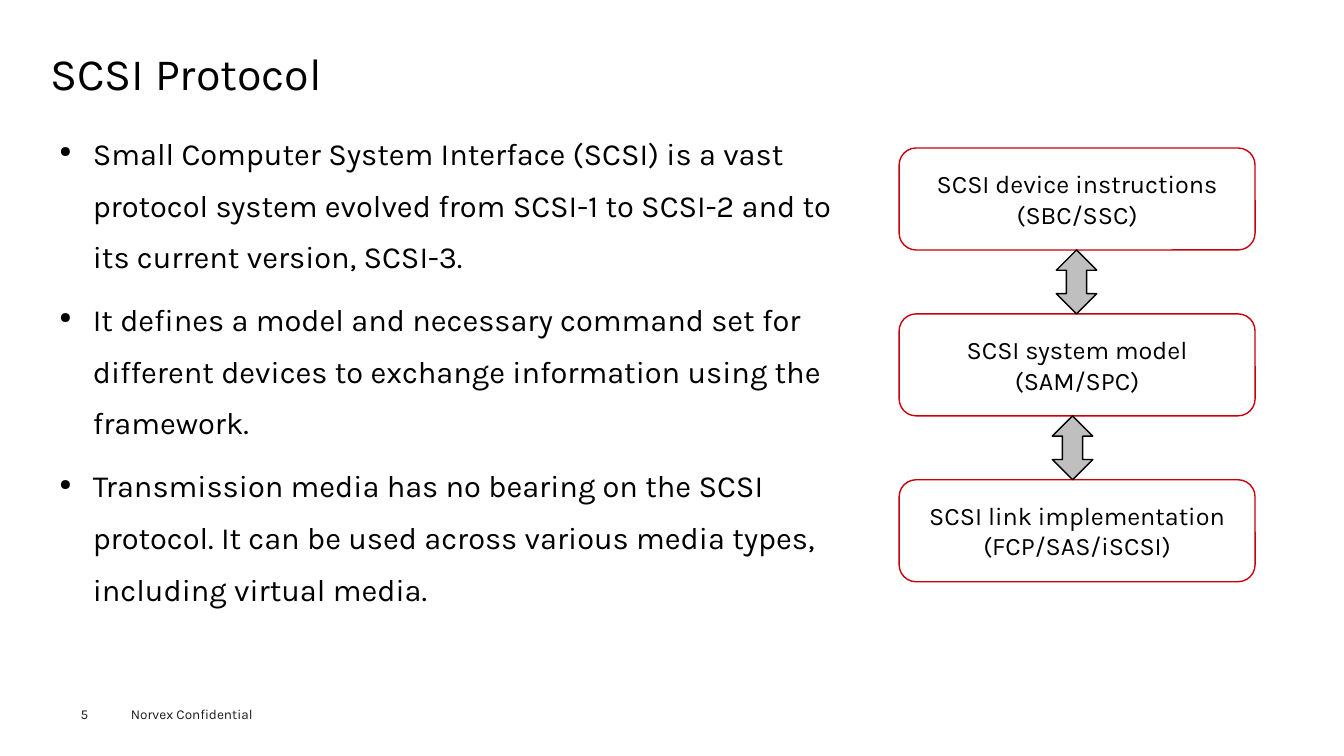
from pptx import Presentation
from pptx.dml.color import RGBColor
from pptx.enum.shapes import MSO_SHAPE as SHAPE
from pptx.enum.text import MSO_ANCHOR as ANCHOR, PP_ALIGN as ALIGN
from pptx.oxml import parse_xml
from pptx.oxml.ns import nsdecls
from pptx.util import Cm, Pt

FONT = "Karla"
BLACK, WHITE, RED, GREY, INK = "000000", "FFFFFF", "C7000B", "BFBFBF", "1D1D1B"

POINTS = [
    "Small Computer System Interface (SCSI) is a vast protocol system evolved "
    "from SCSI-1 to SCSI-2 and to its current version, SCSI-3.",
    "It defines a model and necessary command set for different devices to "
    "exchange information using the framework.",
    "Transmission media has no bearing on the SCSI protocol. It can be used "
    "across various media types, including virtual media.",
]
LAYERS = [
    ("SCSI device instructions", "(SBC/SSC)"),
    ("SCSI system model", "(SAM/SPC)"),
    ("SCSI link implementation", "(FCP/SAS/iSCSI)"),
]
ARROW_LEFTS = [26.62, 26.52]


def rgb(value):
    return RGBColor.from_string(value)


def write(tf, lines, size, color=BLACK, align=ALIGN.LEFT):
    tf.word_wrap = True
    tf.text = "\n".join(lines)
    for p in tf.paragraphs:
        p.alignment = align
        for r in p.runs:
            r.font.name, r.font.size = FONT, Pt(size)
            r.font.color.rgb = rgb(color)


def add_text(slide, box, lines, size, color=BLACK, inset=(0, 0)):
    tf = slide.shapes.add_textbox(*map(Cm, box)).text_frame
    tf.margin_left = tf.margin_right = Cm(inset[0])
    tf.margin_top = tf.margin_bottom = Cm(inset[1])
    write(tf, lines, size, color)
    return tf


def add_bullets(slide, box, lines, size):
    tf = add_text(slide, box, lines, size, inset=(0.23, 0.1))
    for i, p in enumerate(tf.paragraphs):
        p.line_spacing = 1.4
        p.space_before = Pt(7.9 if i else 0)
        pPr = p._p.get_or_add_pPr()
        pPr.set("marL", str(Cm(0.84)))
        pPr.set("indent", str(-Cm(0.84)))
        for tag in ('buSzPct val="50000"', 'buChar char="●"'):
            pPr.append(parse_xml(f"<a:{tag} {nsdecls('a')}/>"))


def add_shape(slide, kind, box, fill, line):
    sp = slide.shapes.add_shape(kind, *map(Cm, box))
    sp.shadow.inherit = False
    sp.fill.solid()
    sp.fill.fore_color.rgb = rgb(fill)
    sp.line.color.rgb = rgb(line)
    sp.line.width = Pt(1)
    return sp


def add_layer_stack(slide):
    left, top, width, height, pitch = 22.66, 3.73, 8.97, 2.57, 4.18
    for i, lines in enumerate(LAYERS):
        box = (left, top + i * pitch, width, height)
        sp = add_shape(slide, SHAPE.ROUNDED_RECTANGLE, box, WHITE, RED)
        sp.text_frame.vertical_anchor = ANCHOR.MIDDLE
        write(sp.text_frame, lines, 18, align=ALIGN.CENTER)
    # Arrows fill the gaps between the layers
    for i, x in enumerate(ARROW_LEFTS):
        box = (x, top + height + i * pitch, 1.02, pitch - height)
        add_shape(slide, SHAPE.UP_DOWN_ARROW, box, GREY, BLACK)


def main():
    prs = Presentation()
    prs.slide_width, prs.slide_height = Cm(33.87), Cm(19.05)
    slide = prs.slides.add_slide(prs.slide_layouts[6])

    # Footer
    add_text(slide, (3.05, 17.65, 5, 0.69), ["Norvex Confidential"], 9.7, INK, (0.25, 0.13))
    add_text(slide, (2.03, 17.78, 1.02, 0.41), ["5"], 9.7, INK)

    # Title
    tf = add_text(slide, (1.27, 1.24, 31.37, 1.37), ["SCSI Protocol"], 32)
    tf.vertical_anchor = ANCHOR.MIDDLE
    tf.paragraphs[0].line_spacing = 0.9

    # Body and diagram
    add_bullets(slide, (1.27, 2.92, 20.9, 12.65), POINTS, 22)
    add_layer_stack(slide)

    prs.save("out.pptx")


if __name__ == "__main__":
    main()
